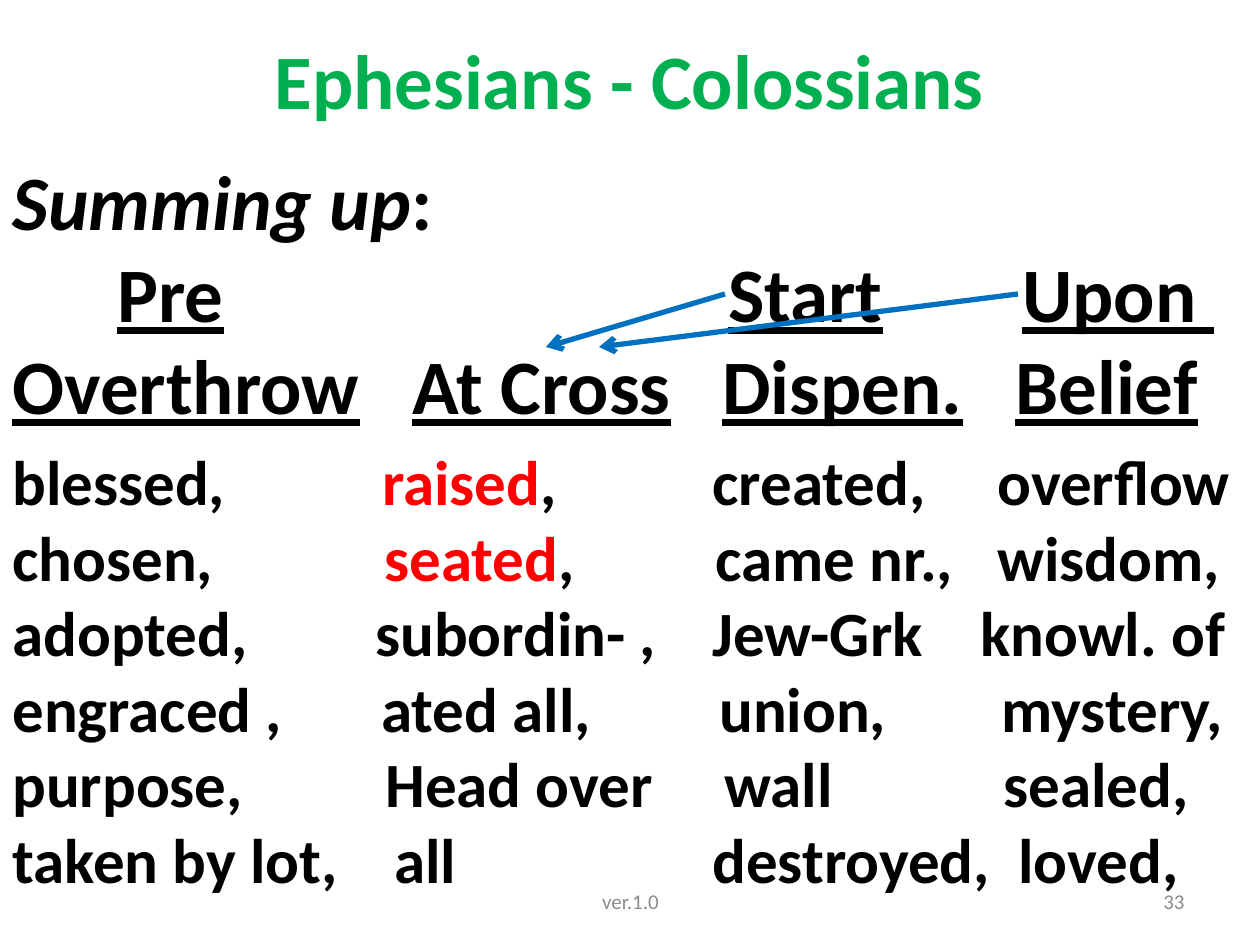
from lxml import etree
from pptx import Presentation
from pptx import util as u
from pptx.dml.color import RGBColor
from pptx.enum import shapes, text
from pptx.oxml.ns import qn

PX = 914400 / 126
INSET = 13
FONT = "Calibri"
COLORS = {"title": "00B050", "body": "000000", "accent": "FF0000",
          "footer": "8C8C8C", "arrow": "0070C0"}
PLAIN = {}
UNDERLINED = {"underline": True}
ITALIC = {"italic": True}
RED = {"color": "accent"}

HEADINGS = [
    [(INSET, "Summing up", ITALIC), (None, ":", PLAIN)],
    [(118, "Pre", UNDERLINED), (729, "Start", UNDERLINED), (1023, "Upon ", UNDERLINED)],
    [(INSET, "Overthrow", UNDERLINED), (413, "At Cross", UNDERLINED),
     (723, "Dispen.", UNDERLINED), (1016, "Belief", UNDERLINED)],
]
BLESSINGS = [
    [(INSET, "blessed,", PLAIN), (383, "raised", RED), (None, ",", PLAIN),
     (713, "created,", PLAIN), (998, "overflow", PLAIN)],
    [(INSET, "chosen,", PLAIN), (385, "seated", RED), (None, ",", PLAIN),
     (716, "came nr.,", PLAIN), (998, "wisdom,", PLAIN)],
    [(INSET, "adopted,", PLAIN), (376, "subordin- ,", PLAIN),
     (713, "Jew-Grk", PLAIN), (981, "knowl. of", PLAIN)],
    [(INSET, "engraced ,", PLAIN), (382, "ated all,", PLAIN),
     (720, "union,", PLAIN), (1002, "mystery,", PLAIN)],
    [(INSET, "purpose,", PLAIN), (386, "Head over", PLAIN),
     (725, "wall", PLAIN), (1004, "sealed,", PLAIN)],
    [(INSET, "taken by lot,", PLAIN), (395, "all", PLAIN),
     (713, "destroyed,", PLAIN), (1019, "loved,", PLAIN)],
]


def px(length):
    return u.Emu(round(length * PX))


def color(name):
    return RGBColor.from_string(COLORS[name])


def set_values(target, values):
    for name, value in values.items():
        setattr(target, name, value)


def add_run(paragraph, words, size, color_name, **style):
    run = paragraph.add_run()
    run.text = words
    set_values(run.font, {"name": FONT, "size": u.Pt(size), **style})
    run.font.color.rgb = color(color_name)


def add_text_box(slide, box, **frame_values):
    shape = slide.shapes.add_textbox(*map(px, box))
    set_values(shape.text_frame, {"word_wrap": True, **frame_values})
    return shape.text_frame


def place_title(slide, box, words):
    title = slide.shapes.title
    set_values(title, dict(zip(("left", "top", "width", "height"), map(px, box))))
    title.text_frame.vertical_anchor = text.MSO_ANCHOR.MIDDLE
    paragraph = title.text_frame.paragraphs[0]
    paragraph.alignment = text.PP_ALIGN.CENTER
    add_run(paragraph, words, 44, "title", bold=True)


def add_tab_stops(paragraph, stops):
    tab_list = etree.SubElement(paragraph._p.get_or_add_pPr(), qn("a:tabLst"))
    for stop in stops:
        etree.SubElement(tab_list, qn("a:tab"), pos=str(px(stop)), algn="l")


def fill_row(paragraph, cells, size, space_before):
    paragraph.space_before = u.Pt(space_before)
    stops = [left - INSET for left, _, _ in cells if left and left > INSET]
    if stops:
        add_tab_stops(paragraph, stops)
    for left, words, style in cells:
        style = dict(style)
        color_name = style.pop("color", "body")
        if left and left > INSET:
            add_run(paragraph, "\t", size, "body", bold=True)
        add_run(paragraph, words, size, color_name, bold=True, **style)


def add_summary(slide, box):
    frame = add_text_box(slide, box)
    paragraph = frame.paragraphs[0]
    for rows, size, gap in ((HEADINGS, 44, 9), (BLESSINGS, 36, 7)):
        for index, cells in enumerate(rows):
            if paragraph is None:
                paragraph = frame.add_paragraph()
            fill_row(paragraph, cells, size, 0 if index else gap)
            paragraph = None


def add_footer(slide, box, words, alignment):
    frame = add_text_box(slide, box, vertical_anchor=text.MSO_ANCHOR.MIDDLE)
    frame.paragraphs[0].alignment = alignment
    add_run(frame.paragraphs[0], words, 12, "footer")


def add_arrow(slide, start, end):
    arrow = slide.shapes.add_connector(
        shapes.MSO_CONNECTOR.STRAIGHT, *map(px, start + end))
    arrow.line.color.rgb = color("arrow")
    arrow.line.width = u.Pt(3)
    etree.SubElement(arrow.line._get_or_add_ln(), qn("a:tailEnd"), type="arrow")
    etree.SubElement(arrow._element.spPr, qn("a:effectLst"))


def main():
    presentation = Presentation()
    set_values(presentation, {"slide_width": px(1260), "slide_height": px(945)})
    slide = presentation.slides.add_slide(presentation.slide_layouts[5])
    place_title(slide, (63, 0, 1134, 158), "Ephesians - Colossians")
    add_summary(slide, (0, 147, 1260, 756))
    add_footer(slide, (431, 876, 399, 50), "ver.1.0", text.PP_ALIGN.CENTER)
    add_footer(slide, (903, 876, 294, 50), "33", text.PP_ALIGN.RIGHT)
    for start, end in (((725, 294), (546, 347)), ((1018, 294), (599, 347))):
        add_arrow(slide, start, end)
    presentation.save("out.pptx")


if __name__ == "__main__":
    main()
